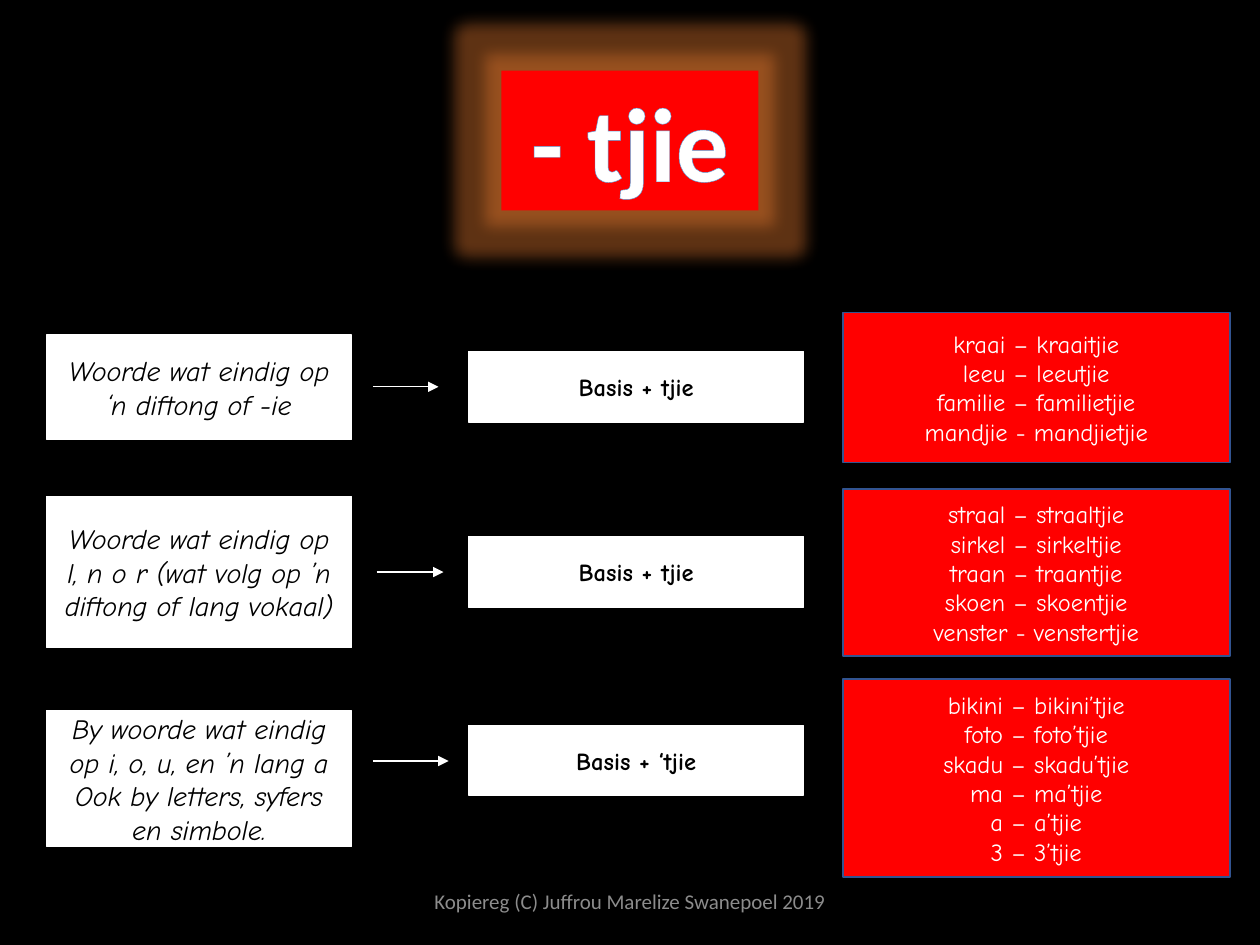
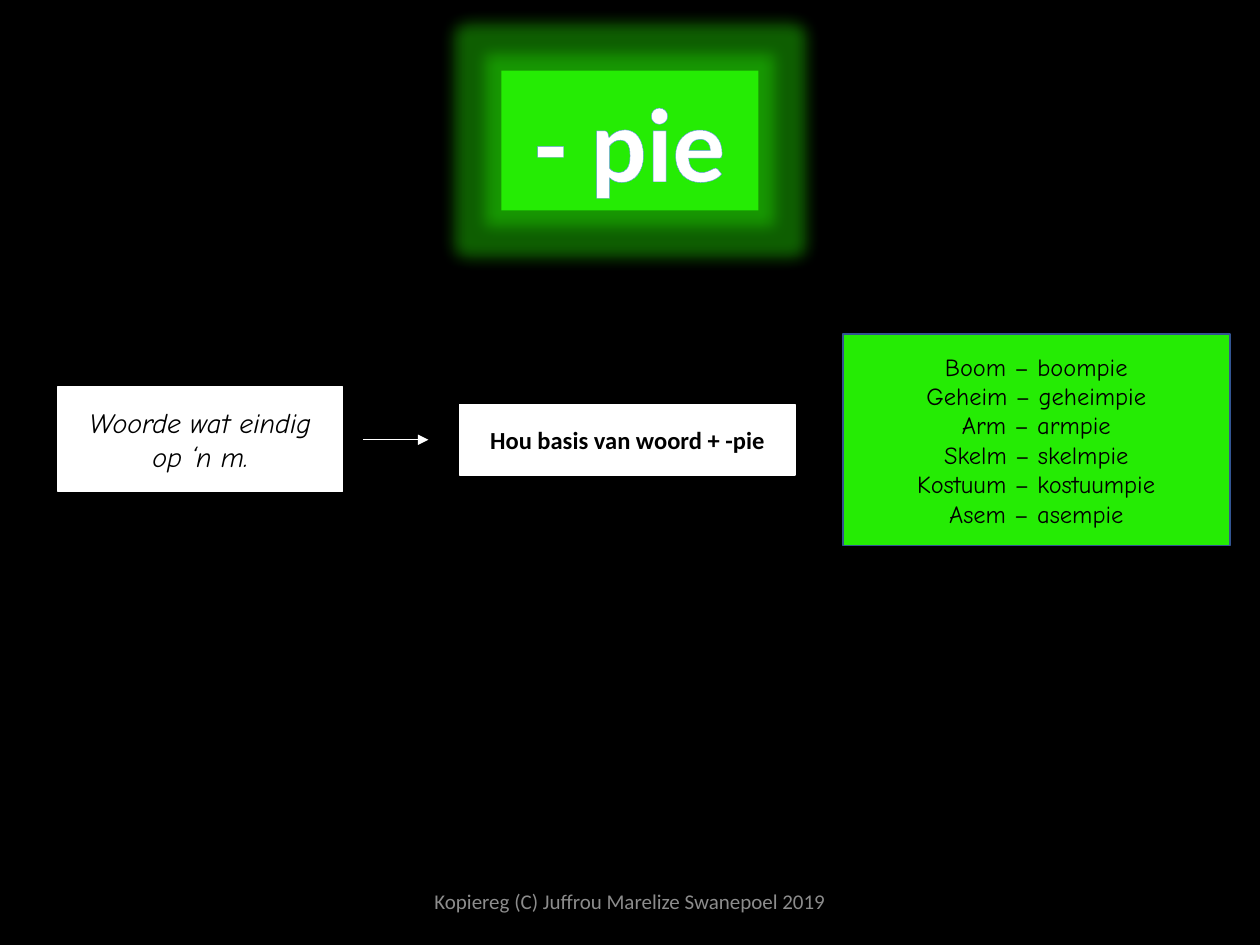
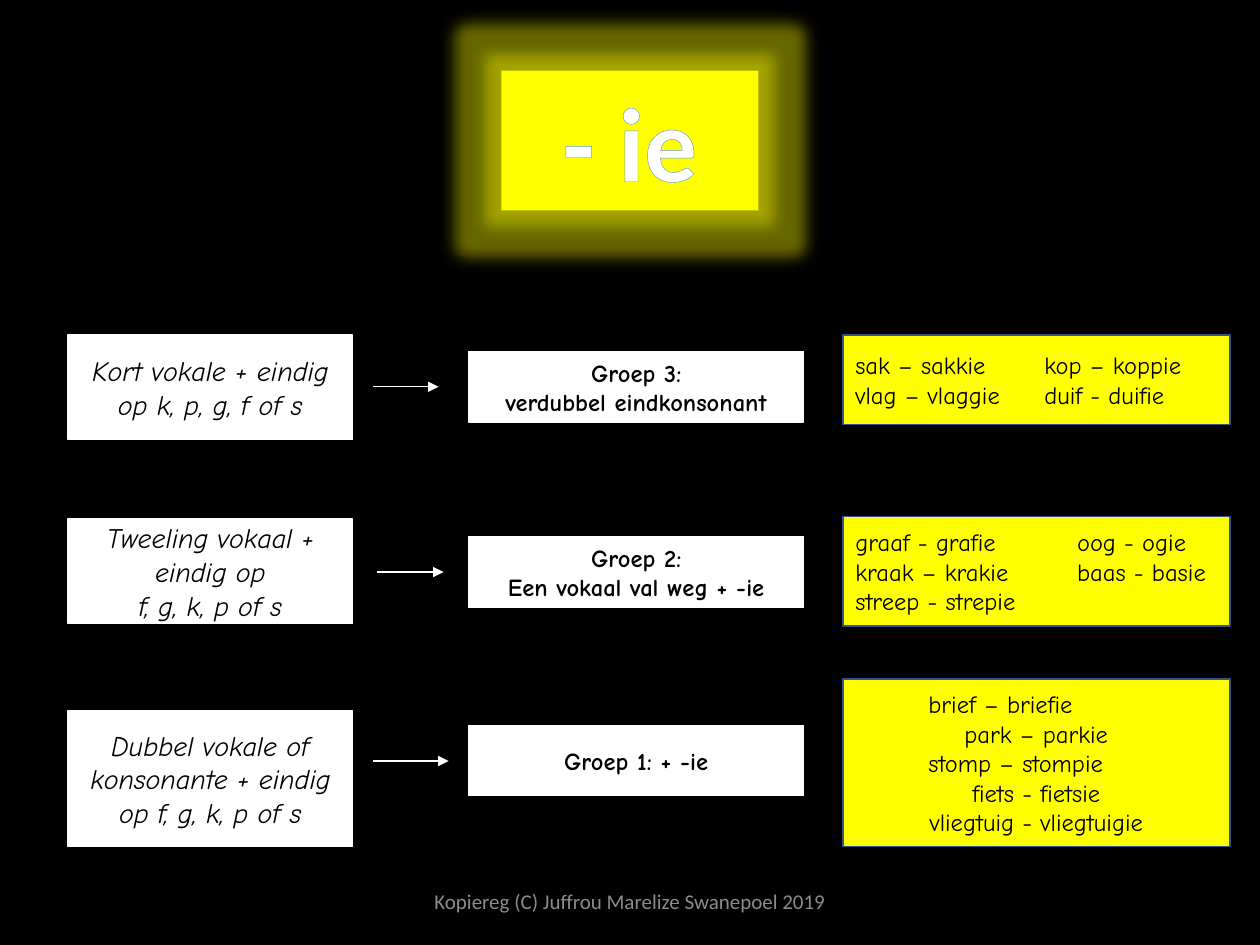
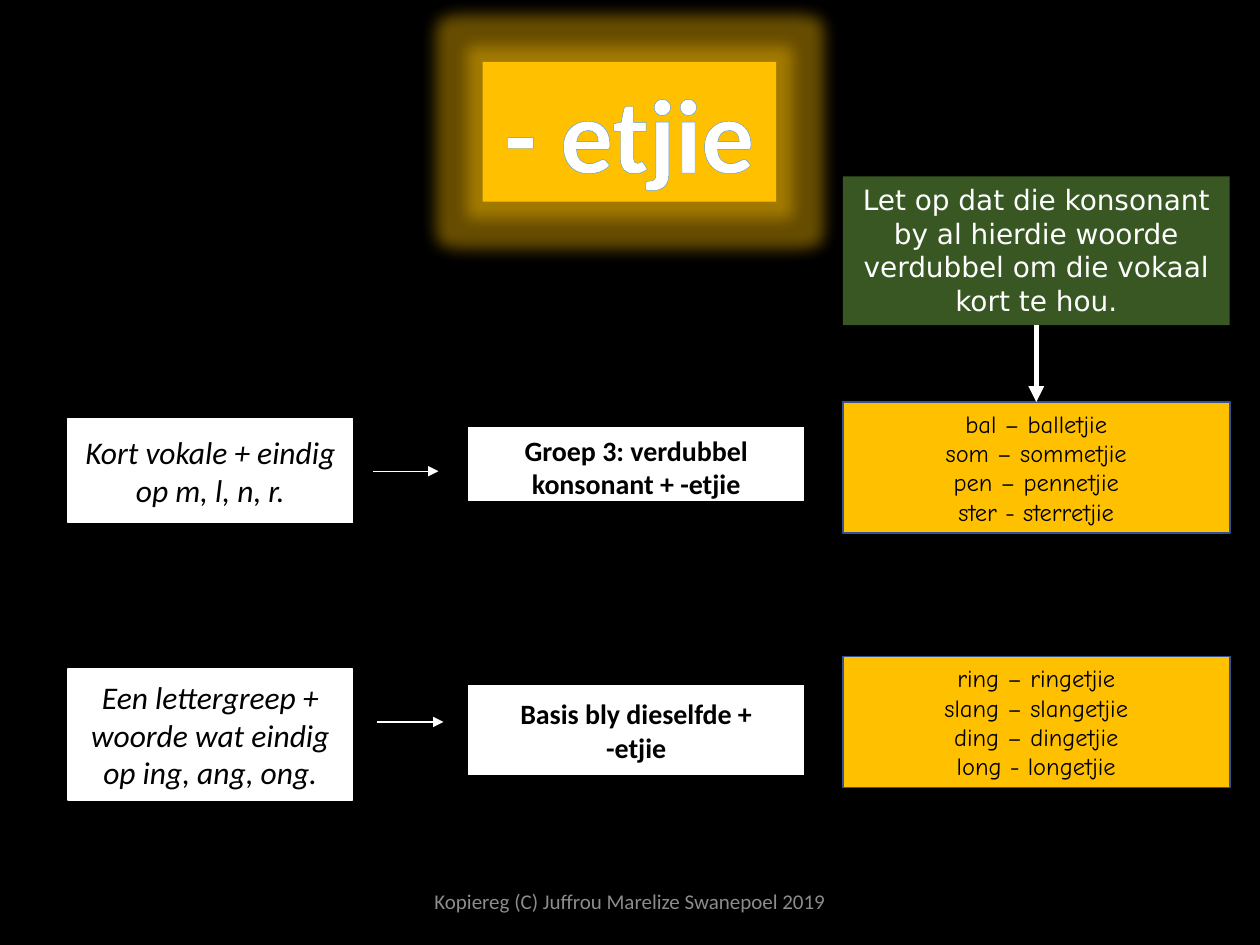
from lxml import etree
from pptx import Presentation
from pptx.dml.color import RGBColor
from pptx.enum.shapes import MSO_CONNECTOR, MSO_SHAPE
from pptx.enum.text import MSO_ANCHOR, MSO_AUTO_SIZE, PP_ALIGN
from pptx.oxml.ns import qn
from pptx.util import Inches, Pt

RECT = MSO_SHAPE.RECTANGLE
STRAIGHT = MSO_CONNECTOR.STRAIGHT
TOP, MIDDLE = MSO_ANCHOR.TOP, MSO_ANCHOR.MIDDLE
LEFT, CENTER = PP_ALIGN.LEFT, PP_ALIGN.CENTER
GROW = MSO_AUTO_SIZE.SHAPE_TO_FIT_TEXT

BLACK = RGBColor(0x00, 0x00, 0x00)
WHITE = RGBColor(0xFF, 0xFF, 0xFF)
GRAY = RGBColor(0x8C, 0x8C, 0x8C)
BLUE = RGBColor(0x32, 0x54, 0x91)
SKY = RGBColor(0x5B, 0x9B, 0xD5)
RED = RGBColor(0xFF, 0x00, 0x00)
ORANGE = RGBColor(0xED, 0x7D, 0x31)
GREEN = RGBColor(0x25, 0xEC, 0x04)
YELLOW = RGBColor(0xFF, 0xFF, 0x00)
GOLD = RGBColor(0xFF, 0xC0, 0x00)
FOREST = RGBColor(0x38, 0x57, 0x23)

SANS, COMIC, NOTE = "Calibri", "Comic Neue", "DejaVu Sans"
WIDE, HIGH = 10, 7.5
RULE_X, RULE_W = 3.72, 2.66
WORD_X, WORD_W = 6.69, 3.07
RULES = [(2.79, 0.56), (4.26, 0.56), (5.76, 0.55)]
ARROWS = [(2.96, 3.48, 3.07), (2.99, 3.52, 4.54), (2.96, 3.56, 6.04)]

TJIE = [
    ((2.66, 0.83), "Woorde wat eindig op ‘n diftong of -ie", "Basis + tjie", (2.48, 1.19),
     "kraai – kraaitjie\nleeu – leeutjie\nfamilie – familietjie\nmandjie - mandjietjie"),
    ((3.94, 1.2), "Woorde wat eindig op l, n o r (wat volg op ’n diftong of lang vokaal)",
     "Basis + tjie", (3.88, 1.33),
     "straal – straaltjie\nsirkel – sirkeltjie\ntraan – traantjie\nskoen – skoentjie\n"
     "venster - venstertjie"),
    ((5.64, 1.08), "By woorde wat eindig op i, o, u, en ’n lang a\n"
     "Ook by letters, syfers en simbole.", "Basis + ‘tjie", (5.39, 1.57),
     "bikini – bikini’tjie\nfoto – foto’tjie\nskadu – skadu’tjie\nma – ma’tjie\n"
     "a – a’tjie\n3 – 3’tjie"),
]
IE = [
    ((2.66, 0.83), "Kort vokale + eindig\nop k, p, g, f of s",
     "Groep 3:\nverdubbel eindkonsonant", (2.66, 0.71),
     "sak – sakkie\tkop – koppie\nvlag – vlaggie\tduif - duifie"),
    ((4.12, 0.83), "Tweeling vokaal + eindig op\nf, g, k, p of s",
     "Groep 2:\nEen vokaal val weg + -ie", (4.1, 0.87),
     "graaf - grafie\toog - ogie\nkraak – krakie\tbaas - basie\nstreep - strepie"),
    ((5.64, 1.08), "Dubbel vokale of konsonante + eindig op f, g, k, p of s",
     "Groep 1: + -ie", (5.39, 1.33),
     "brief – briefie\npark – parkie\nstomp – stompie\nfiets - fietsie\n"
     "vliegtuig - vliegtuigie"),
]
ETJIE = [
    ((3.32, 0.83), "Kort vokale + eindig op m, l, n, r.", (3.39, 0.58), TOP,
     "Groep 3: verdubbel konsonant + -etjie", (2.96, 3.48, 3.74), 3.19,
     "bal – balletjie\nsom – sommetjie\npen – pennetjie\nster - sterretjie"),
    ((5.31, 1.04), "Een lettergreep + woorde wat eindig op ing, ang, ong.",
     (5.44, 0.71), MIDDLE, "Basis bly dieselfde +\n-etjie", (2.99, 3.52, 5.73), 5.21,
     "ring – ringetjie\nslang – slangetjie\nding – dingetjie\nlong - longetjie"),
]


def write(shape, text, font, size, color, bold=False, italic=False, anchor=MIDDLE):
    """Fill a shape with centred, wrapped text in one style."""
    frame = shape.text_frame
    frame.text = text
    frame.word_wrap = True
    frame.vertical_anchor = anchor
    for para in frame.paragraphs:
        para.alignment = CENTER
        for run in para.runs:
            run.font.name = font
            run.font.size = Pt(size)
            run.font.color.rgb = color
            run.font.bold = bold
            run.font.italic = italic


def box(slide, left, top, width, height, fill, edge=None, weight=0.75):
    """Add a flat rectangle with an optional edge."""
    shape = slide.shapes.add_shape(
        RECT, Inches(left), Inches(top), Inches(width), Inches(height))
    shape.shadow.inherit = False
    shape.fill.solid()
    shape.fill.fore_color.rgb = fill
    if edge is None:
        shape.line.fill.background()
    else:
        shape.line.color.rgb = edge
        shape.line.width = Pt(weight)
    return shape


def tint(parent, color):
    """Add a colour element and return it."""
    return etree.SubElement(parent, qn("a:srgbClr"), val=str(color))


def title(slide, text, fill, glow, left=3.98, top=0.56, width=2.04):
    """Add the glowing suffix sign with outlined letters."""
    sign = box(slide, left, top, width, 1.11, fill)
    write(sign, text, SANS, 60, WHITE, bold=True, anchor=TOP)
    sign.text_frame.auto_size = GROW
    effects = sign._element.spPr.find(qn("a:effectLst"))
    halo = etree.SubElement(effects, qn("a:glow"), rad=str(Pt(18)))
    etree.SubElement(tint(halo, glow), qn("a:alpha"), val="40000")
    props = sign.text_frame.paragraphs[0].runs[0]._r.get_or_add_rPr()
    line = etree.Element(qn("a:ln"), w=str(Pt(0.8)))
    tint(etree.SubElement(line, qn("a:solidFill")), SKY)
    props.insert(0, line)


def footer(slide):
    """Add the copyright line."""
    text = slide.shapes.add_textbox(
        Inches(3.31), Inches(6.95), Inches(3.38), Inches(0.4))
    write(text, "Kopiereg (C) Juffrou Marelize Swanepoel 2019", SANS, 12, GRAY)


def arrow(slide, start, end, weight=0.75):
    """Add a white arrow between two points."""
    line = slide.shapes.add_connector(
        STRAIGHT, *(Inches(value) for value in (*start, *end)))
    line.line.color.rgb = WHITE
    line.line.width = Pt(weight)
    props = line._element.spPr
    etree.SubElement(props.find(qn("a:ln")), qn("a:tailEnd"), type="triangle")
    etree.SubElement(props, qn("a:effectLst"))
    return line


def case(slide, left, width, span, text, font=COMIC, size=16):
    """Add the box that says which words are meant."""
    shape = box(slide, left, span[0], width, span[1], WHITE, WHITE)
    write(shape, text, font, size, BLACK, italic=True)


def rule(slide, span, text, font=COMIC, size=14, anchor=MIDDLE, left=RULE_X):
    """Add the box that gives the rule."""
    shape = box(slide, left, span[0], RULE_W, span[1], WHITE, WHITE)
    write(shape, text, font, size, BLACK, bold=True, anchor=anchor)


def link(slide, left, right, y):
    """Add the level arrow from case to rule."""
    arrow(slide, (left, y), (right, y))


def words(slide, span, text, fill, color=BLACK):
    """Add the box of examples."""
    shape = box(slide, WORD_X, span[0], WORD_W, span[1], fill, BLUE, 1)
    write(shape, text, COMIC, 14, color)
    return shape


def tabs(shape, stop):
    """Set text in two left-aligned columns."""
    for para in shape.text_frame.paragraphs:
        para.alignment = LEFT
        stops = etree.SubElement(para._p.get_or_add_pPr(), qn("a:tabLst"))
        etree.SubElement(stops, qn("a:tab"), pos=str(Inches(stop)), algn="l")


def indent(shape, rows, gap):
    """Start the given rows at one left indent."""
    for row in rows:
        para = shape.text_frame.paragraphs[row]
        para.alignment = LEFT
        para._p.get_or_add_pPr().set("marL", str(Inches(gap)))


def grid(slide, rows, left, width, fill, color=BLACK):
    """Add three rows of case, rule, arrow and examples."""
    lists = []
    for (span, who, how, place, text), spot, ends in zip(rows, RULES, ARROWS):
        case(slide, left, width, span, who)
        rule(slide, spot, how, anchor=TOP if "\n" in how else MIDDLE)
        link(slide, *ends)
        lists.append(words(slide, place, text, fill, color))
    return lists


def tjie(slide):
    """Build the -tjie slide."""
    title(slide, "- tjie", RED, ORANGE)
    grid(slide, TJIE, 0.37, 2.42, RED, WHITE)


def pie(slide):
    """Build the -pie slide."""
    title(slide, "- pie", GREEN, GREEN)
    case(slide, 0.46, 2.26, (3.07, 0.83), "Woorde wat eindig op ‘n m.")
    rule(slide, (3.21, 0.56), "Hou basis van woord + -pie", SANS, left=3.65)
    link(slide, 2.88, 3.4, 3.49)
    words(slide, (2.65, 1.68),
          "Boom – boompie\nGeheim – geheimpie\nArm – armpie\nSkelm – skelmpie\n"
          "Kostuum – kostuumpie\nAsem – asempie", GREEN)


def ie(slide):
    """Build the -ie slide."""
    title(slide, "- ie", YELLOW, YELLOW)
    short, twin, double = grid(slide, IE, 0.54, 2.26, YELLOW)
    tabs(short, 1.5)
    tabs(twin, 1.76)
    indent(double, (0, 2), 0.58)


def etjie(slide):
    """Build the -etjie slide."""
    title(slide, "- etjie", GOLD, GOLD, 3.83, 0.49, 2.33)
    lists = []
    for span, who, spot, anchor, how, ends, top, text in ETJIE:
        case(slide, 0.54, 2.26, span, who, SANS, 18)
        rule(slide, spot, how, SANS, 16, anchor)
        link(slide, *ends)
        lists.append(words(slide, (top, 1.04), text, GOLD))
    note = box(slide, WORD_X, 1.4, WORD_W, 1.18, FOREST)
    write(note, "Let op dat die konsonant by al hierdie woorde verdubbel "
          "om die vokaal kort te hou.", NOTE, 16, WHITE, anchor=TOP)
    note.text_frame.auto_size = GROW
    down = arrow(slide, (8.22, 2.58), (8.22, 3.19), 3)
    down.begin_connect(note, 2)
    down.end_connect(lists[0], 0)


def main():
    """Build and save the deck."""
    deck = Presentation()
    deck.slide_width, deck.slide_height = Inches(WIDE), Inches(HIGH)
    back = deck.slide_master.background.fill
    back.solid()
    back.fore_color.rgb = BLACK
    for build in (tjie, pie, ie, etjie):
        slide = deck.slides.add_slide(deck.slide_layouts[6])
        footer(slide)
        build(slide)
    deck.save("out.pptx")


if __name__ == "__main__":
    main()
